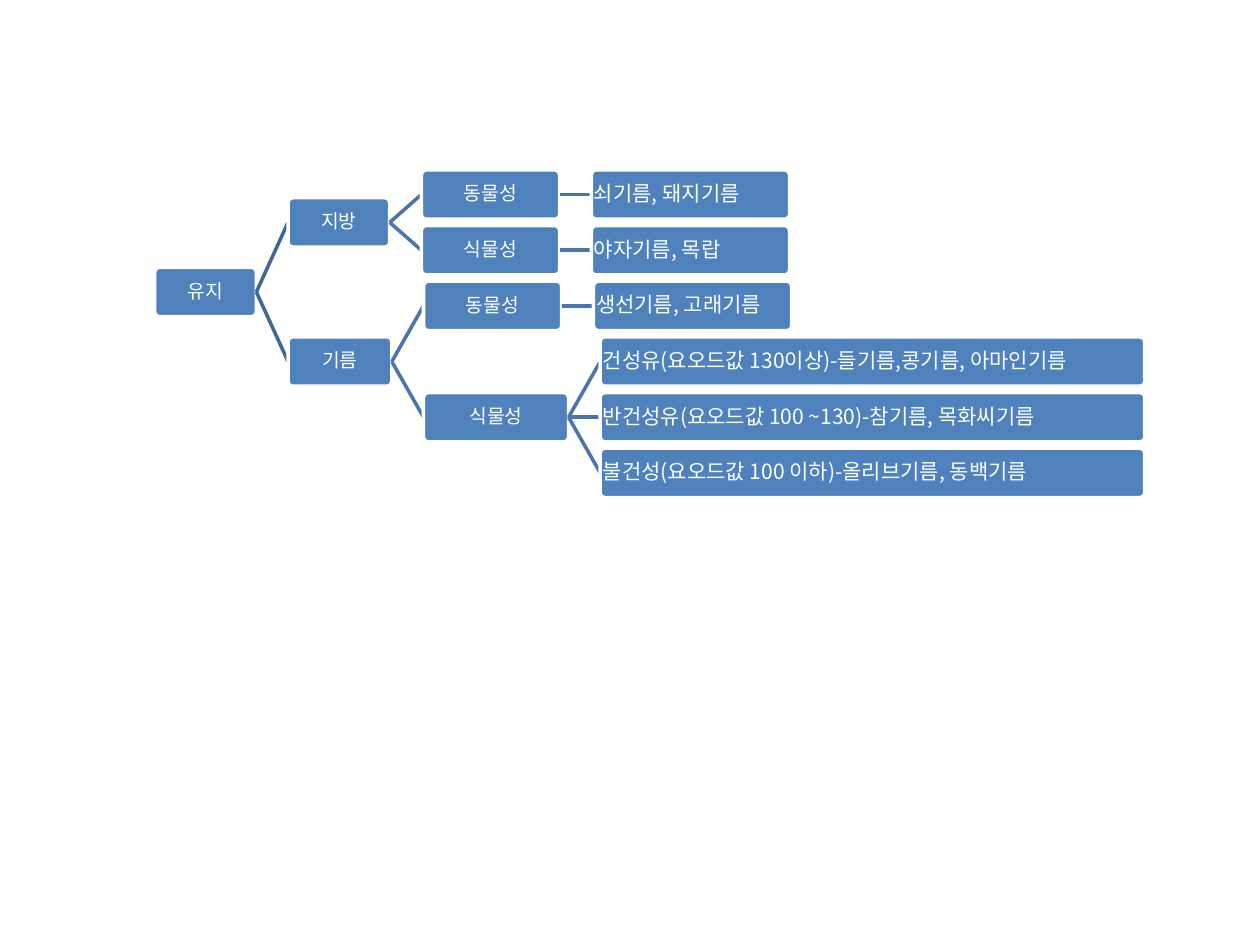
from dataclasses import dataclass

from lxml.etree import SubElement
from pptx import Presentation
from pptx.dml.color import RGBColor
from pptx.enum.shapes import MSO_CONNECTOR, MSO_SHAPE
from pptx.enum.text import MSO_ANCHOR, PP_ALIGN
from pptx.oxml.ns import qn
from pptx.util import Pt

TOP_ROW_CENTER, ROW_PITCH = 111.2, 31.8
ROOT_LEFT, COLUMN_GAP, NODE_HEIGHT = 88.4, 18.1, 28.2
CATEGORY_WIDTH, SOURCE_WIDTH = 58.1, 79
EXAMPLE_WIDTH, DETAIL_WIDTH = 113.3, 311.2


def color(hex_value):
    return RGBColor.from_string(hex_value)


def set_attributes(target, values):
    for name, value in values.items():
        setattr(target, name, value)


@dataclass
class Node:
    text: str
    width: float
    children: tuple = ()
    row: float = 0


def assign_rows(node, next_row=0):
    """Give each leaf its own row and center each parent on its children."""
    if not node.children:
        node.row = next_row
        return next_row + 1
    for child in node.children:
        next_row = assign_rows(child, next_row)
    node.row = (node.children[0].row + node.children[-1].row) / 2
    return next_row


class TreeSlide:
    font_name = "Noto Sans CJK KR"
    node_fill = "4F81BD"
    white = "FFFFFF"
    first_branch, later_branch = "3F6797", "4875AC"
    line_width = 2

    def __init__(self, slide):
        self.slide = slide

    def box(self, node, left, center):
        shape = self.slide.shapes.add_shape(
            MSO_SHAPE.ROUNDED_RECTANGLE, Pt(left), Pt(center - NODE_HEIGHT / 2),
            Pt(node.width), Pt(NODE_HEIGHT))
        shape.adjustments[0] = 0.1
        shape.shadow.inherit = False
        shape.fill.solid()
        shape.fill.fore_color.rgb = color(self.node_fill)
        shape.line.color.rgb = color(self.white)
        shape.line.width = Pt(self.line_width)
        self.label(shape, node)

    def label(self, shape, node):
        is_leaf = not node.children
        frame = shape.text_frame
        margins = ("margin_left", "margin_top", "margin_right", "margin_bottom")
        set_attributes(frame, dict.fromkeys(margins, Pt(0.72)))
        set_attributes(frame, {"word_wrap": True,
                               "vertical_anchor": MSO_ANCHOR.MIDDLE})
        paragraph = frame.paragraphs[0]
        set_attributes(paragraph, {
            "alignment": PP_ALIGN.LEFT if is_leaf else PP_ALIGN.CENTER,
            "line_spacing": 0.9})
        run = paragraph.add_run()
        run.text = node.text
        set_attributes(run.font, {"name": self.font_name,
                                  "size": Pt(12 if is_leaf else 11)})
        run.font.color.rgb = color(self.white)
        east_asian = SubElement(run.font._element, qn("a:ea"))
        east_asian.set("typeface", self.font_name)

    def branch(self, start, end, line_color):
        connector = self.slide.shapes.add_connector(
            MSO_CONNECTOR.STRAIGHT, *(Pt(value) for value in start + end))
        connector.line.color.rgb = color(line_color)
        connector.line.width = Pt(self.line_width)
        SubElement(connector._element.spPr, qn("a:effectLst"))

    def tree(self, node, left, depth=0):
        center = TOP_ROW_CENTER + node.row * ROW_PITCH
        self.box(node, left, center)
        right = left + node.width
        line_color = self.later_branch if depth else self.first_branch
        for child in node.children:
            child_left = right + COLUMN_GAP
            child_center = TOP_ROW_CENTER + child.row * ROW_PITCH
            self.branch((right, center), (child_left, child_center), line_color)
            self.tree(child, child_left, depth + 1)


def main():
    presentation = Presentation()
    presentation.slide_width, presentation.slide_height = Pt(720), Pt(540)
    slide = presentation.slides.add_slide(presentation.slide_layouts[6])

    fat = Node("지방", CATEGORY_WIDTH, (
        Node("동물성", SOURCE_WIDTH, (Node("쇠기름, 돼지기름", EXAMPLE_WIDTH),)),
        Node("식물성", SOURCE_WIDTH, (Node("야자기름, 목랍", EXAMPLE_WIDTH),)),
    ))
    vegetable_oils = tuple(Node(text, DETAIL_WIDTH) for text in (
        "건성유(요오드값 130이상)-들기름,콩기름, 아마인기름",
        "반건성유(요오드값 100 ~130)-참기름, 목화씨기름",
        "불건성(요오드값 100 이하)-올리브기름, 동백기름",
    ))
    oil = Node("기름", 59.3, (
        Node("동물성", SOURCE_WIDTH, (Node("생선기름, 고래기름", EXAMPLE_WIDTH),)),
        Node("식물성", 82.9, vegetable_oils),
    ))
    root = Node("유지", CATEGORY_WIDTH, (fat, oil))

    assign_rows(root)
    TreeSlide(slide).tree(root, ROOT_LEFT)
    presentation.save("out.pptx")


if __name__ == "__main__":
    main()
